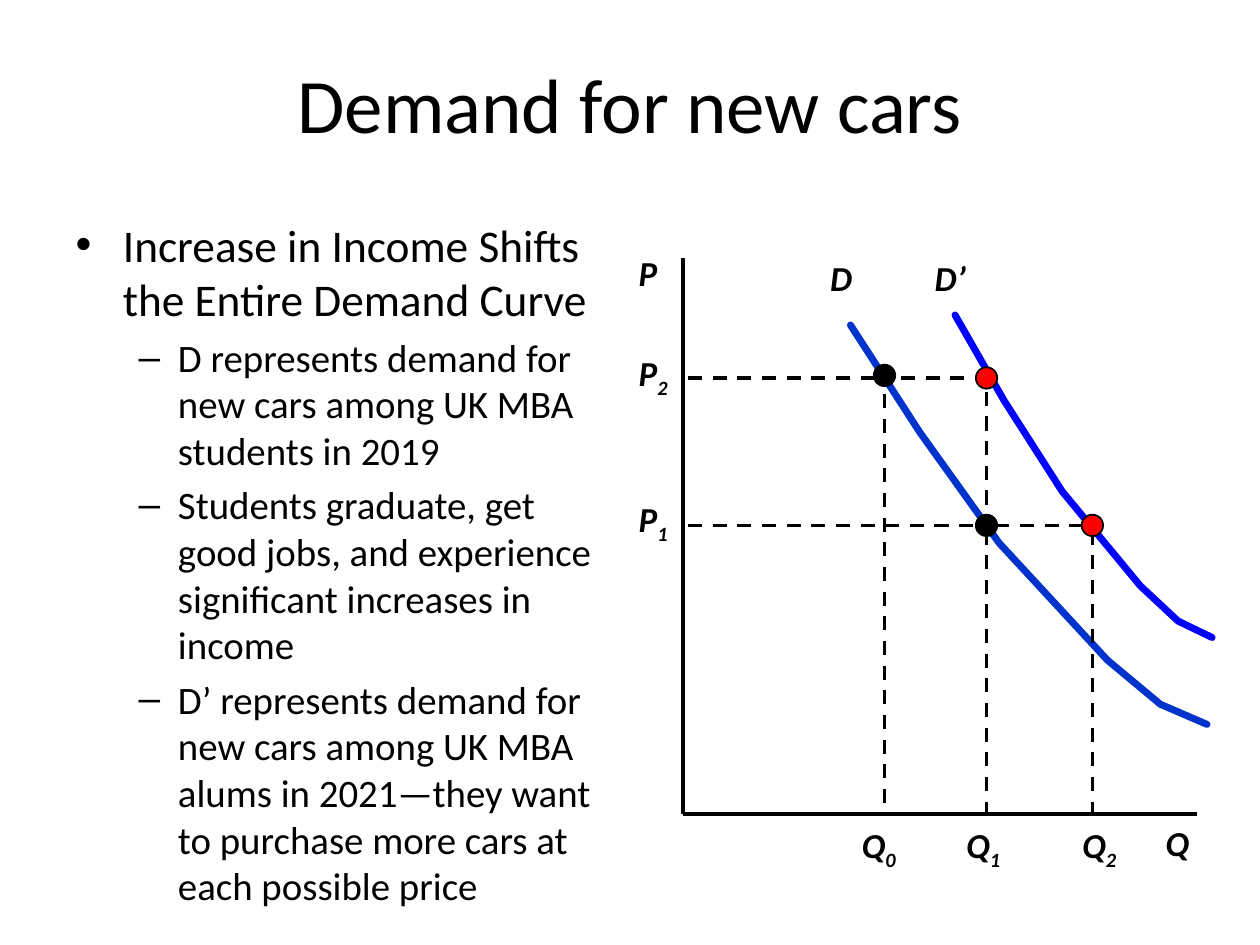
from dataclasses import dataclass

from lxml.etree import SubElement
from pptx import Presentation
from pptx.dml.color import RGBColor
from pptx.enum.dml import MSO_LINE
from pptx.enum.shapes import MSO_CONNECTOR, MSO_SHAPE
from pptx.enum.text import MSO_ANCHOR, MSO_AUTO_SIZE, PP_ALIGN
from pptx.oxml.ns import qn
from pptx.slide import Slide
from pptx.util import Inches, Pt


@dataclass(frozen=True)
class Theme:
    font: str = "Calibri"
    ink: RGBColor = RGBColor(0, 0, 0)
    demand: RGBColor = RGBColor(0x00, 0x33, 0xCC)
    shifted_demand: RGBColor = RGBColor(0x00, 0x00, 0xFF)
    shifted_point: RGBColor = RGBColor(0xFF, 0x00, 0x00)
    title_size: float = 44
    level_sizes: tuple[float, ...] = (25.9, 22.2)
    label_size: float = 20
    curve_width: float = 4
    line_width: float = 2
    dot_outline: float = 1


@dataclass(frozen=True)
class Label:
    letter: str
    left: float
    top: float
    width: float
    subscript: str = ""


@dataclass(frozen=True)
class Curve:
    points: tuple[tuple[float, float], ...]
    color: RGBColor


@dataclass(frozen=True)
class Line:
    x1: float
    y1: float
    x2: float
    y2: float
    dashed: bool = True


@dataclass(frozen=True)
class Dot:
    x: float
    y: float
    color: RGBColor


THEME = Theme()
DOT_SIZE = 0.17
LABEL_HEIGHT = 0.43

# Positions of the prices, quantities and axes, in inches
P2, P1 = 3.0, 4.17
Q0, Q1, Q2 = 7.02, 7.83, 8.67
AXIS_X, AXIS_Y = 5.42, 6.46
GUIDE_LEFT = 5.46
PRICE_LABEL_LEFT, QUANTITY_LABEL_TOP, CURVE_LABEL_TOP = 4.97, 6.49, 1.99

TITLE = "Demand for new cars"
BULLETS = (
    (0, "Increase in Income Shifts the Entire Demand Curve"),
    (1, "D represents demand for new cars among UK MBA students in 2019"),
    (1, "Students graduate, get good jobs, and experience significant "
        "increases in income"),
    (1, "D’ represents demand for new cars among UK MBA alums in 2021—they "
        "want to purchase more cars at each possible price"),
)
CURVES = (
    Curve(((6.75, 2.58), (7.3, 3.43), (7.93, 4.31), (8.79, 5.24),
           (9.21, 5.59), (9.58, 5.75)), THEME.demand),
    Curve(((7.58, 2.5), (7.97, 3.18), (8.43, 3.9), (9.05, 4.65),
           (9.35, 4.93), (9.62, 5.06)), THEME.shifted_demand),
)
LINES = (
    Line(AXIS_X, 2.05, AXIS_X, AXIS_Y, dashed=False),
    Line(AXIS_X, AXIS_Y, 9.5, AXIS_Y, dashed=False),
    Line(GUIDE_LEFT, P2, Q0, P2),
    Line(7.15, P2, 7.73, P2),
    Line(GUIDE_LEFT, P1, 7.75, P1),
    Line(7.9, P1, 8.65, P1),
    Line(Q0, 3.13, Q0, AXIS_Y),
    Line(Q1, 3.11, Q1, 4.02),
    Line(Q1, 4.21, Q1, AXIS_Y),
    Line(Q2, 4.21, Q2, AXIS_Y),
)
DOTS = (
    Dot(Q0, 2.98, THEME.ink),
    Dot(Q1, P1, THEME.ink),
    Dot(Q1, P2, THEME.shifted_point),
    Dot(Q2, P1, THEME.shifted_point),
)
LABELS = (
    Label("P", PRICE_LABEL_LEFT, 1.95, 0.38),
    Label("P", PRICE_LABEL_LEFT, 2.74, 0.48, "2"),
    Label("P", PRICE_LABEL_LEFT, 3.9, 0.48, "1"),
    Label("D", 6.49, CURVE_LABEL_TOP, 0.4),
    Label("D’", 7.32, CURVE_LABEL_TOP, 0.48),
    Label("Q", 6.74, QUANTITY_LABEL_TOP, 0.51, "0"),
    Label("Q", 7.57, QUANTITY_LABEL_TOP, 0.51, "1"),
    Label("Q", 8.49, QUANTITY_LABEL_TOP, 0.51, "2"),
    Label("Q", 9.15, 6.47, 0.41),
)


def style_font(font, size: float) -> None:
    font.name = THEME.font
    font.size = Pt(size)
    font.color.rgb = THEME.ink


def place(shape, left: float, top: float, width: float, height: float) -> None:
    shape.left, shape.top = Inches(left), Inches(top)
    shape.width, shape.height = Inches(width), Inches(height)


def fill_title(slide: Slide) -> None:
    title = slide.shapes.title
    place(title, 0.5, 0.3, 9, 1.03)
    title.text_frame.text = TITLE
    title.text_frame.vertical_anchor = MSO_ANCHOR.MIDDLE
    heading = title.text_frame.paragraphs[0]
    heading.alignment = PP_ALIGN.CENTER
    style_font(heading.runs[0].font, THEME.title_size)


def fill_body(slide: Slide) -> None:
    body = slide.placeholders[1]
    place(body, 0.5, 1.67, 4.42, 5.03)
    frame = body.text_frame
    frame.text = "\n".join(text for _, text in BULLETS)
    frame.auto_size = MSO_AUTO_SIZE.NONE
    for paragraph, (level, _) in zip(frame.paragraphs, BULLETS):
        paragraph.level = level
        style_font(paragraph.runs[0].font, THEME.level_sizes[level])


def draw_curve(slide: Slide, curve: Curve) -> None:
    start, *rest = [(Inches(x), Inches(y)) for x, y in curve.points]
    builder = slide.shapes.build_freeform(*start)
    builder.add_line_segments(rest, close=False)
    shape = builder.convert_to_shape()
    shape.shadow.inherit = False
    shape.fill.background()
    shape.line.color.rgb = curve.color
    shape.line.width = Pt(THEME.curve_width)
    outline = shape.line._get_or_add_ln()
    outline.set("cap", "rnd")
    SubElement(outline, qn("a:round"))


def draw_line(slide: Slide, line: Line) -> None:
    connector = slide.shapes.add_connector(
        MSO_CONNECTOR.STRAIGHT, Inches(line.x1), Inches(line.y1),
        Inches(line.x2), Inches(line.y2))
    connector.line.color.rgb = THEME.ink
    connector.line.width = Pt(THEME.line_width)
    if line.dashed:
        connector.line.dash_style = MSO_LINE.DASH
    SubElement(connector._element.spPr, qn("a:effectLst"))


def draw_dot(slide: Slide, dot: Dot) -> None:
    shape = slide.shapes.add_shape(
        MSO_SHAPE.OVAL, Inches(dot.x - DOT_SIZE / 2),
        Inches(dot.y - DOT_SIZE / 2), Inches(DOT_SIZE), Inches(DOT_SIZE))
    shape.shadow.inherit = False
    shape.fill.solid()
    shape.fill.fore_color.rgb = dot.color
    shape.line.color.rgb = THEME.ink
    shape.line.width = Pt(THEME.dot_outline)


def draw_label(slide: Slide, label: Label) -> None:
    box = slide.shapes.add_textbox(Inches(label.left), Inches(label.top),
                                   Inches(label.width), Inches(LABEL_HEIGHT))
    box.text_frame.word_wrap = False
    paragraph = box.text_frame.paragraphs[0]
    paragraph.text = label.letter
    if label.subscript:
        index = paragraph.add_run()
        index.text = label.subscript
        index.font._element.set("baseline", "-25000")
    for run in paragraph.runs:
        style_font(run.font, THEME.label_size)
        run.font.bold = run.font.italic = True


def main() -> None:
    presentation = Presentation()
    presentation.slide_width, presentation.slide_height = Inches(10), Inches(7.5)
    slide = presentation.slides.add_slide(presentation.slide_layouts[1])
    fill_title(slide)
    fill_body(slide)
    for draw, items in ((draw_curve, CURVES), (draw_line, LINES),
                        (draw_dot, DOTS), (draw_label, LABELS)):
        for item in items:
            draw(slide, item)
    presentation.save("out.pptx")


if __name__ == "__main__":
    main()
